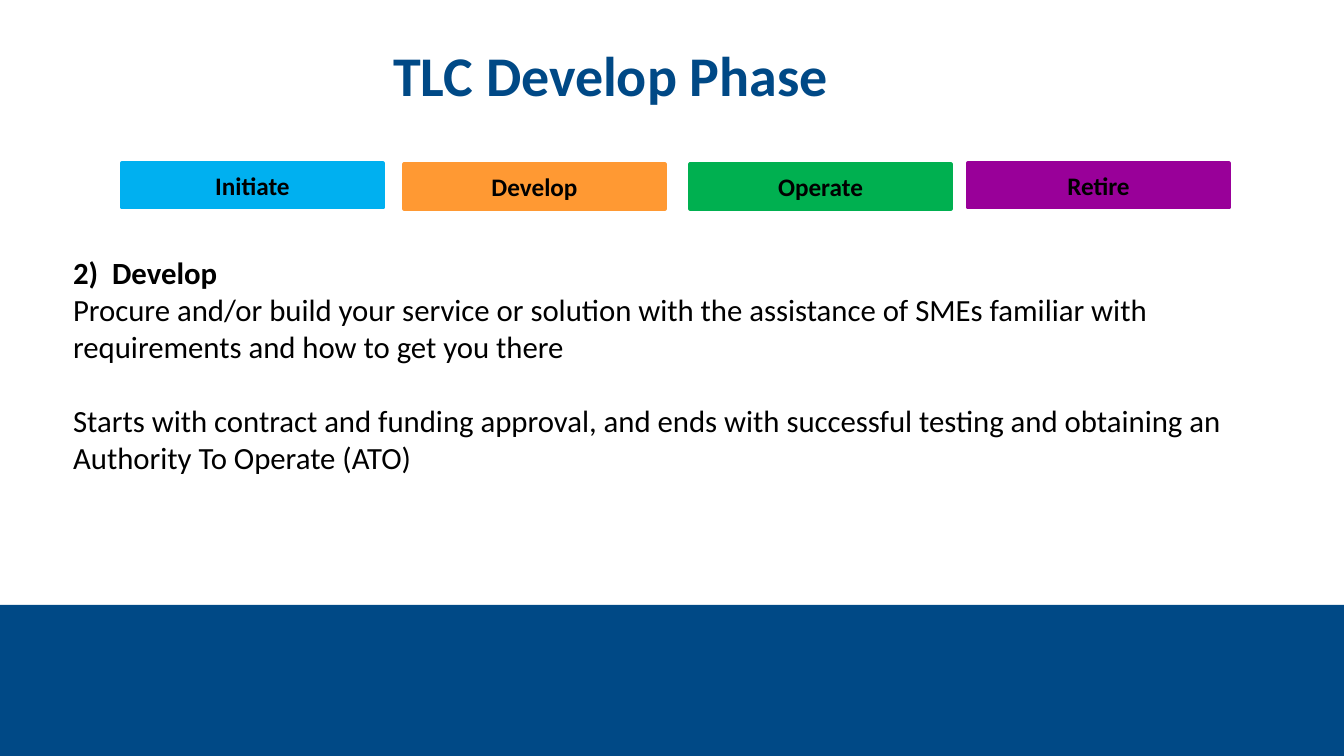
"""Build the TLC Develop Phase slide."""
import pptx
import pptx.util
import pptx.dml.color
import pptx.enum.shapes
import pptx.enum.text

PX = 914400 / 100.8
COLORS = {
    "navy": "004986",
    "black": "000000",
    "Initiate": "00B0F0",
    "Develop": "FF9933",
    "Operate": "00B050",
    "Retire": "990099",
}
ALIGN = pptx.enum.text.PP_ALIGN
ANCHOR = pptx.enum.text.MSO_ANCHOR


def px(*lengths):
    return [round(length * PX) for length in lengths]


def write(paragraph, text, size=22, color="black", bold=False, align=ALIGN.LEFT,
          line_spacing=1.0, before=0):
    paragraph.text = text
    paragraph.alignment = align
    paragraph.line_spacing = line_spacing
    paragraph.space_before = pptx.util.Pt(before)
    paragraph.font.name = "Calibri"
    paragraph.font.size = pptx.util.Pt(size)
    paragraph.font.bold = bold
    paragraph.font.color.rgb = pptx.dml.color.RGBColor.from_string(COLORS[color])


deck = pptx.Presentation()
deck.slide_width, deck.slide_height = px(1344, 756)
slide = deck.slides.add_slide(deck.slide_layouts[1])
title, description = slide.placeholders

footer_band = slide.shapes.add_shape(
    pptx.enum.shapes.MSO_SHAPE.RECTANGLE, *px(0, 605, 1344, 151))
footer_band.shadow.inherit = False
footer_band.fill.solid()
footer_band.fill.fore_color.rgb = pptx.dml.color.RGBColor.from_string(COLORS["navy"])
footer_band.line.fill.background()

title.left, title.top, title.width, title.height = px(1, 32, 1219, 82)
title.text_frame.auto_size = pptx.enum.text.MSO_AUTO_SIZE.NONE
title.text_frame.vertical_anchor = ANCHOR.BOTTOM
write(title.text_frame.paragraphs[0], "TLC Develop Phase", size=40, color="navy",
      bold=True, align=ALIGN.CENTER, line_spacing=0.9)

description.left, description.top, description.width, description.height = px(13, 249, 1248, 234)
description.text_frame.auto_size = pptx.enum.text.MSO_AUTO_SIZE.NONE
description.text_frame.vertical_anchor = ANCHOR.TOP
DESCRIPTION = [
    ("2)\tDevelop", True, 0, 89, -39),
    ("Procure and/or build your service or solution with the assistance of SMEs "
     "familiar with requirements and how to get you there", False, 0, 50, 0),
    ("Starts with contract and funding approval, and ends with successful testing "
     "and obtaining an Authority To Operate (ATO)", False, 26.5, 50, 0),
]
for index, (text, bold, before, margin, indent) in enumerate(DESCRIPTION):
    frame = description.text_frame
    paragraph = frame.add_paragraph() if index else frame.paragraphs[0]
    properties = paragraph._p.get_or_add_pPr()
    properties.set("marL", str(*px(margin)))
    properties.set("indent", str(*px(indent)))
    properties.append(pptx.oxml.parse_xml(
        '<a:buNone xmlns:a="http://schemas.openxmlformats.org/drawingml/2006/main"/>'))
    write(paragraph, text, bold=bold, before=before)

PHASES = [("Initiate", 122, 163), ("Develop", 404, 164),
          ("Operate", 690, 164), ("Retire", 968, 163)]
for phase, left, top in PHASES:
    box = slide.shapes.add_shape(
        pptx.enum.shapes.MSO_SHAPE.RECTANGLE, *px(left, top, 261, 45))
    box.shadow.inherit = False
    fill_color = pptx.dml.color.RGBColor.from_string(COLORS[phase])
    box.fill.solid()
    box.fill.fore_color.rgb = fill_color
    box.line.color.rgb = fill_color
    box.line.width = pptx.util.Pt(2.25)
    box.text_frame.vertical_anchor = ANCHOR.MIDDLE
    write(box.text_frame.paragraphs[0], phase, size=18, bold=True, align=ALIGN.CENTER)

deck.save("out.pptx")
